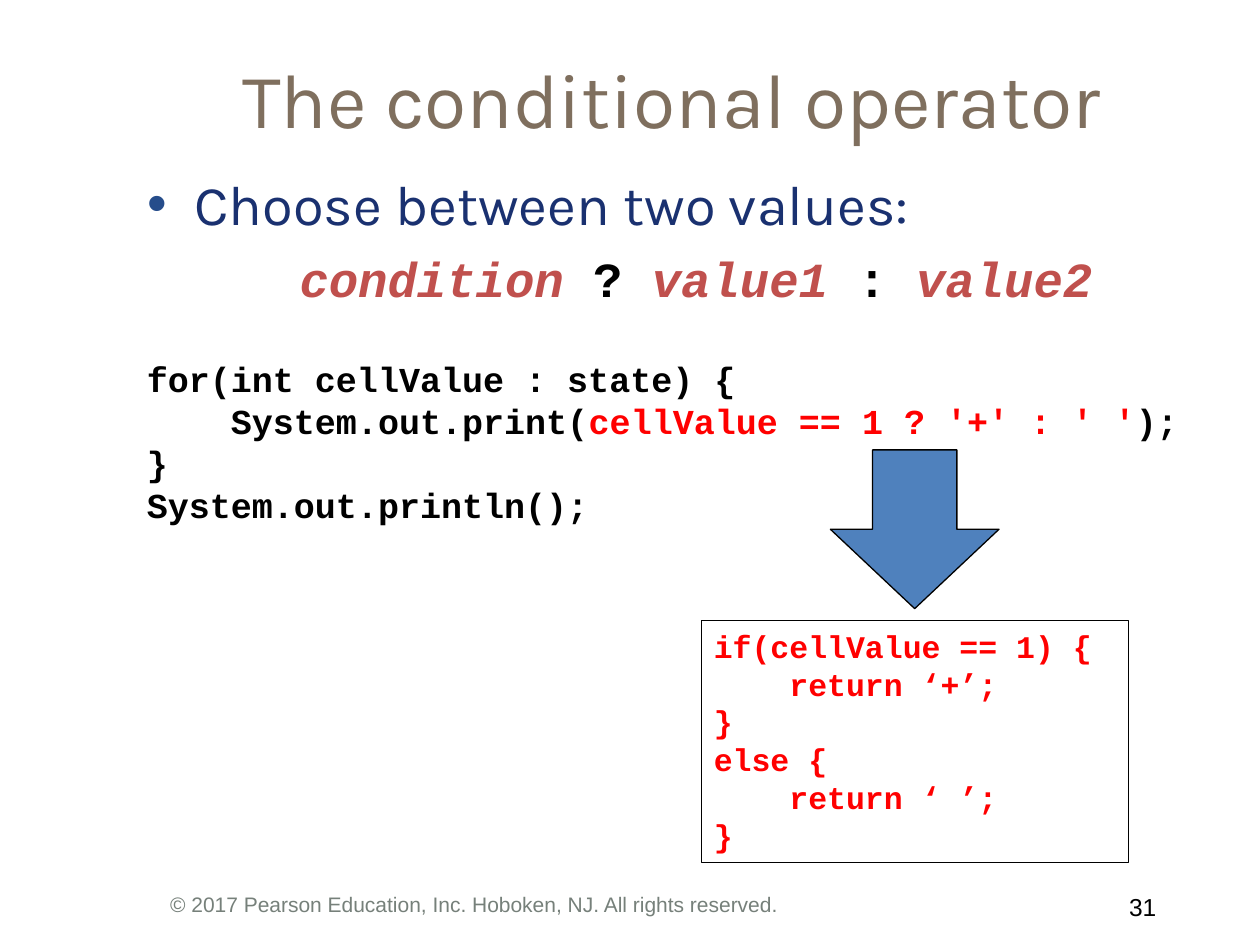
"""Build a slide that introduces the conditional operator."""
import pptx
import pptx.dml.color
import pptx.enum.shapes
import pptx.enum.text
import pptx.oxml
import pptx.oxml.ns
import pptx.util

Cm = pptx.util.Cm
Pt = pptx.util.Pt
RGBColor = pptx.dml.color.RGBColor
Align = pptx.enum.text.PP_ALIGN
Anchor = pptx.enum.text.MSO_ANCHOR
AutoSize = pptx.enum.text.MSO_AUTO_SIZE
ShapeType = pptx.enum.shapes.MSO_SHAPE

BLACK = RGBColor(0x00, 0x00, 0x00)
RED = RGBColor(0xFF, 0x00, 0x00)
BRICK = RGBColor(0xC0, 0x50, 0x4D)
BROWN = RGBColor(0x7F, 0x6F, 0x5E)
NAVY = RGBColor(0x1A, 0x31, 0x70)
BLUE = RGBColor(0x4F, 0x81, 0xBD)
GREY = RGBColor(0x76, 0x80, 0x7A)
BULLET_COLOR = RGBColor(0x26, 0x4D, 0x8B)

TITLE = [[("The conditional operator", BROWN)]]
BODY = [[("Choose between two values:", NAVY)]]
SYNTAX = [[
    ("condition", BRICK), (" ? ", BLACK), ("value1", BRICK),
    (" : ", BLACK), ("value2", BRICK),
]]
LOOP_CODE = [
    [("for(int cellValue : state) {", BLACK)],
    [("    System.out.print(", BLACK), ("cellValue == 1 ? '+' : ' '", RED), (");", BLACK)],
    [("}", BLACK)],
    [("System.out.println();", BLACK)],
]
IF_CODE = [
    [(line, RED)]
    for line in ("if(cellValue == 1) {", "    return ‘+’;", "}",
                 "else {", "    return ‘ ’;", "}")
]
COPYRIGHT = [[("© 2017 Pearson Education, Inc. Hoboken, NJ. All rights reserved.", GREY)]]
PAGE_NUMBER = [[("31 ", BLACK)]]


def place(shape, left, top, width, height):
    shape.left, shape.top = Cm(left), Cm(top)
    shape.width, shape.height = Cm(width), Cm(height)


def write(shape, lines, font, size, align=Align.LEFT, bold=False, italic_color=None):
    frame = shape.text_frame
    for index, line in enumerate(lines):
        paragraph = frame.add_paragraph() if index else frame.paragraphs[0]
        paragraph.alignment = align
        paragraph.space_before = Pt(0)
        for text, color in line:
            run = paragraph.add_run()
            run.text = text
            run.font.name = font
            run.font.size = Pt(size)
            run.font.bold = bold
            run.font.italic = color == italic_color
            run.font.color.rgb = color


def add_text(slide, box, lines, font, size, wrap=True, **style):
    shape = slide.shapes.add_textbox(*map(Cm, box))
    shape.text_frame.word_wrap = wrap
    if not wrap:
        shape.text_frame.auto_size = AutoSize.SHAPE_TO_FIT_TEXT
    write(shape, lines, font, size, **style)


def add_outlined(slide, kind, box):
    shape = slide.shapes.add_shape(kind, *map(Cm, box))
    shape.shadow.inherit = False
    shape.fill.background()
    shape.line.color.rgb = BLACK
    shape.line.width = Pt(0.75)
    return shape


def add_bullet(paragraph):
    properties = paragraph._p.get_or_add_pPr()
    properties.set("marL", str(Cm(0.95)))
    properties.set("indent", str(-Cm(0.95)))
    namespace = pptx.oxml.ns.nsdecls("a")
    for element in (
        f'<a:buClr {namespace}><a:srgbClr val="{BULLET_COLOR}"/></a:buClr>',
        f'<a:buFont {namespace} typeface="Arial"/>',
        f'<a:buChar {namespace} char="•"/>',
    ):
        properties.append(pptx.oxml.parse_xml(element))


def main():
    presentation = pptx.Presentation()
    presentation.slide_width, presentation.slide_height = Cm(25.4), Cm(19.05)
    slide = presentation.slides.add_slide(presentation.slide_layouts[1])

    title = slide.shapes.title
    place(title, 2.75, 1.05, 21.59, 1.83)
    title.text_frame.auto_size = AutoSize.NONE
    title.text_frame.vertical_anchor = Anchor.MIDDLE
    write(title, TITLE, "Karla", 44, align=Align.CENTER)

    body = slide.placeholders[1]
    place(body, 2.72, 3.28, 20.75, 2.57)
    body.text_frame.auto_size = AutoSize.NONE
    add_bullet(body.text_frame.paragraphs[0])
    write(body, BODY, "Karla", 32)

    add_text(slide, (22.23, 17.86, 1.47, 0.84), PAGE_NUMBER, "Arial", 14, align=Align.RIGHT)
    add_text(slide, (3.18, 17.84, 19.25, 0.84), COPYRIGHT, "Arial", 12)
    add_text(slide, (2.71, 7.09, 21.46, 3.68), LOOP_CODE, "Courier New", 20,
             wrap=False, bold=True)
    add_text(slide, (5.79, 4.88, 16.61, 1.45), SYNTAX, "Courier New", 28,
             wrap=False, bold=True, italic_color=BRICK)

    expansion = add_outlined(slide, ShapeType.RECTANGLE, (14.14, 12.51, 8.61, 4.88))
    expansion.text_frame.word_wrap = True
    expansion.text_frame.vertical_anchor = Anchor.TOP
    write(expansion, IF_CODE, "Courier New", 18, bold=True)

    arrow = add_outlined(slide, ShapeType.DOWN_ARROW, (16.74, 9.07, 3.4, 3.2))
    arrow.fill.solid()
    arrow.fill.fore_color.rgb = BLUE

    presentation.save("out.pptx")


if __name__ == "__main__":
    main()
